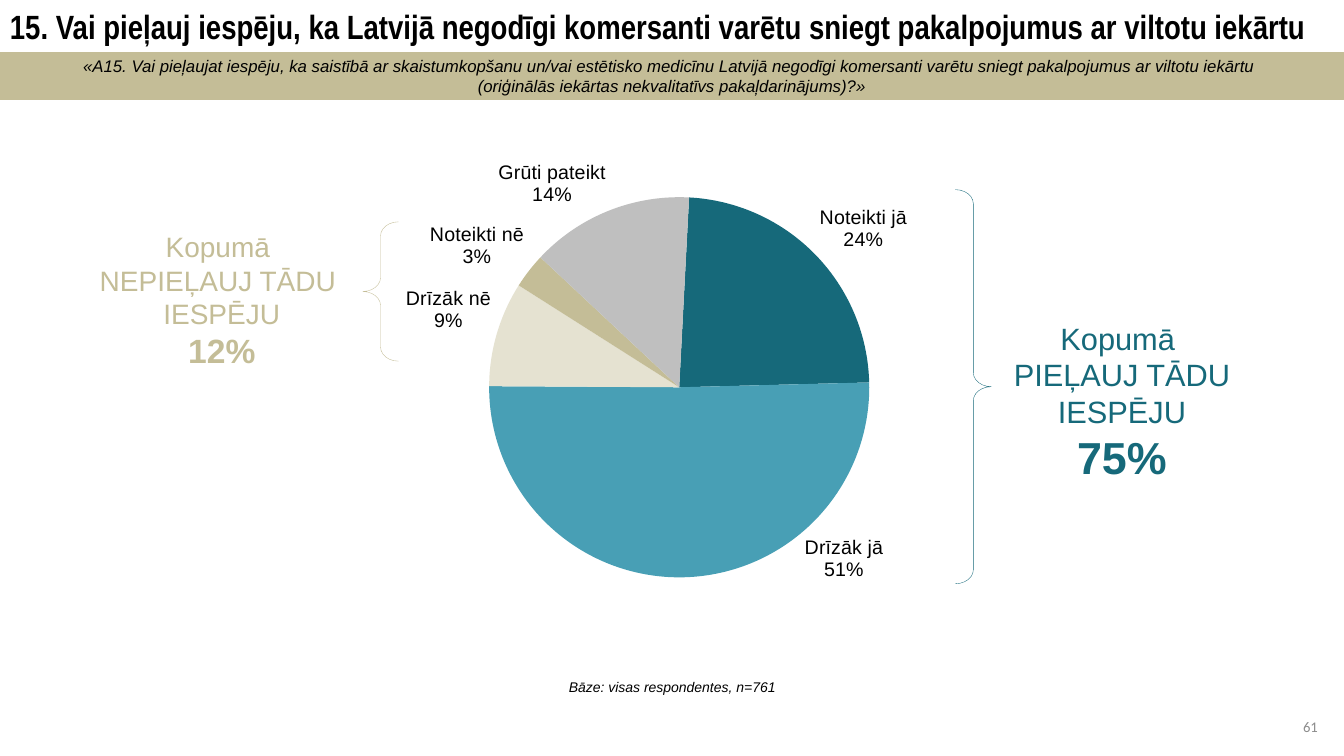
from pptx import Presentation
from pptx.chart.data import CategoryChartData
from pptx.dml.color import RGBColor
from pptx.enum.chart import XL_CHART_TYPE, XL_LABEL_POSITION
from pptx.enum.shapes import MSO_SHAPE
from pptx.enum.text import MSO_ANCHOR, PP_ALIGN
from pptx.oxml import parse_xml
from pptx.util import Cm, Pt

PIE = XL_CHART_TYPE.PIE
OUTSIDE = XL_LABEL_POSITION.OUTSIDE_END
RECTANGLE, BRACE = MSO_SHAPE.RECTANGLE, MSO_SHAPE.RIGHT_BRACE
TOP, MIDDLE = MSO_ANCHOR.TOP, MSO_ANCHOR.MIDDLE
LEFT, CENTER, RIGHT = PP_ALIGN.LEFT, PP_ALIGN.CENTER, PP_ALIGN.RIGHT

COLORS = {
    "black": "000000", "number": "8C8C8C", "teal": "16697A", "blue": "489FB5",
    "cream": "E5E2D1", "sand": "C4BD97", "gray": "BFBFBF",
}
ANSWERS = [
    ("Noteikti jā", 24, "teal"),
    ("Drīzāk jā", 51, "blue"),
    ("Drīzāk nē", 9, "cream"),
    ("Noteikti nē", 3, "sand"),
    ("Grūti pateikt", 14, "gray"),
]
CHART_NS = 'xmlns:c="http://schemas.openxmlformats.org/drawingml/2006/chart"'
LABEL_FORMAT = '0"%"'
WIDTH = 33.87


def color(name):
    return RGBColor.from_string(COLORS[name])


def place(left, top, width, height):
    return Cm(left), Cm(top), Cm(width), Cm(height)


def style_font(font, size, color_name, bold=False, italic=False, name="Arial"):
    font.name, font.size = name, Pt(size)
    font.bold, font.italic = bold, italic
    font.color.rgb = color(color_name)


def write(shape, lines, align=CENTER, anchor=MIDDLE):
    """Fill a shape with lines given as (text, font settings)."""
    frame = shape.text_frame
    frame.word_wrap = True
    frame.vertical_anchor = anchor
    for index, (text, settings) in enumerate(lines):
        para = frame.add_paragraph() if index else frame.paragraphs[0]
        para.text = text
        para.alignment = align
        style_font(para.font, **settings)


def add_text(page, area, lines, **layout):
    write(page.shapes.add_textbox(*place(*area)), lines, **layout)


def add_band(page, area, text):
    band = page.shapes.add_shape(RECTANGLE, *place(*area))
    band.shadow.inherit = False
    band.fill.solid()
    band.fill.fore_color.rgb = color("sand")
    band.line.color.rgb = color("sand")
    band.line.width = Pt(0.75)
    write(band, [(text, dict(size=12, color_name="black", italic=True))])


def add_brace(page, area, color_name, rotation=0):
    brace = page.shapes.add_shape(BRACE, *place(*area))
    brace.shadow.inherit = False
    brace.fill.background()
    brace.line.color.rgb = color(color_name)
    brace.line.width = Pt(0.25)
    brace.adjustments[0] = 0.393
    brace.rotation = rotation


def add_total(page, area, color_name, size, lead, answer, share, share_size):
    plain = dict(size=size, color_name=color_name)
    strong = dict(size=share_size, color_name=color_name, bold=True)
    add_text(page, area, [(lead, plain), (answer, plain), (share, strong)], anchor=TOP)


def manual_layout(x, y, extra=""):
    return (f'<c:layout {CHART_NS}><c:manualLayout>{extra}'
            f'<c:x val="{x}"/><c:y val="{y}"/>')


def add_pie(page, area):
    data = CategoryChartData(number_format="0")
    data.categories = [name for name, _, _ in ANSWERS]
    data.add_series("Series 1", [value for _, value, _ in ANSWERS])
    chart = page.shapes.add_chart(PIE, *place(*area), data).chart
    chart.has_legend = False
    chart.has_title = False
    style_font(chart.font, 10, "black")
    plot = chart.plots[0]
    plot.vary_by_categories = True
    series = plot.series[0]
    for index, (_, _, color_name) in enumerate(ANSWERS):
        fill = series.points[index].format.fill
        fill.solid()
        fill.fore_color.rgb = color(color_name)

    # Labels: answer above its share
    labels = series.data_labels
    labels.show_category_name = True
    labels.show_value = True
    labels.show_percentage = False
    labels.number_format = LABEL_FORMAT
    labels.number_format_is_linked = False
    labels.position = OUTSIDE
    style_font(labels.font, 14, "black")
    label_xml = labels._element
    separator = parse_xml(f"<c:separator {CHART_NS}>\n</c:separator>")
    label_xml.find("{*}showBubbleSize").addnext(separator)

    # The largest slice has its label moved to the lower right
    moved = parse_xml(
        f'<c:dLbl {CHART_NS}><c:idx val="1"/>'
        + manual_layout(0.18, -0.09) + "</c:manualLayout></c:layout>"
        + f"<c:numFmt formatCode='{LABEL_FORMAT}' sourceLinked='0'/>"
        '<c:spPr/><c:dLblPos val="outEnd"/><c:showLegendKey val="0"/>'
        '<c:showVal val="1"/><c:showCatName val="1"/><c:showSerName val="0"/>'
        '<c:showPercent val="0"/><c:showBubbleSize val="0"/>'
        "<c:separator>\n</c:separator></c:dLbl>")
    label_xml.insert(0, moved)
    style_font(series.points[1].data_label.font, 14, "black")
    leaders = label_xml.find("{*}showLeaderLines")
    if leaders is not None:
        leaders.set("val", "0")

    # Rotation and plot area
    pie_xml = series._element.getparent()
    for angle in pie_xml.findall("{*}firstSliceAng"):
        pie_xml.remove(angle)
    pie_xml.append(parse_xml(f'<c:firstSliceAng {CHART_NS} val="3"/>'))
    plot_area = pie_xml.getparent()
    for layout in plot_area.findall("{*}layout"):
        plot_area.remove(layout)
    edges = ('<c:layoutTarget val="inner"/><c:xMode val="edge"/>'
             '<c:yMode val="edge"/>')
    plot_area.insert(0, parse_xml(
        manual_layout(0.28, 0.07, edges)
        + '<c:w val="0.42"/><c:h val="0.82"/></c:manualLayout></c:layout>'))


def main():
    deck = Presentation()
    deck.slide_width, deck.slide_height = Cm(WIDTH), Cm(19.05)
    page = deck.slides.add_slide(deck.slide_layouts[6])

    # Heading and question
    add_text(page, (0, 0, WIDTH, 1.32), [(
        "15. Vai pieļauj iespēju, ka Latvijā negodīgi komersanti varētu sniegt "
        "pakalpojumus ar viltotu iekārtu",
        dict(size=24, color_name="black", bold=True, name="Arial Narrow"))], align=LEFT)
    add_band(page, (0, 1.32, WIDTH, 1.19),
             "«A15. Vai pieļaujat iespēju, ka saistībā ar skaistumkopšanu un/vai "
             "estētisko medicīnu Latvijā negodīgi komersanti varētu sniegt "
             "pakalpojumus ar viltotu iekārtu \n"
             "(oriģinālās iekārtas nekvalitatīvs pakaļdarinājums)?»")

    # Answers
    add_pie(page, (5.94, 3.53, 22.81, 12.98))

    # Totals beside the pie
    add_brace(page, (9.14, 5.59, 0.9, 3.51), "sand", rotation=180)
    add_total(page, (2.21, 5.66, 6.76, 3.84), "sand", 20,
              "Kopumā ", "NEPIEĻAUJ TĀDU \nIESPĒJU", "12%", 24)
    add_brace(page, (24.08, 4.78, 0.9, 9.93), "teal")
    add_total(page, (25.2, 7.92, 6.15, 4.45), "teal", 22,
              "Kopumā ", "PIEĻAUJ TĀDU IESPĒJU", "75%", 32)

    # Base and page number
    add_text(page, (4.24, 16.71, 25.4, 1.19), [(
        "Bāze: visas respondentes, n=761",
        dict(size=10, color_name="black", italic=True))])
    add_text(page, (29.85, 17.81, 3.61, 1.02), [(
        "61", dict(size=10.5, color_name="number", name="Calibri"))], align=RIGHT)

    deck.save("out.pptx")


if __name__ == "__main__":
    main()
